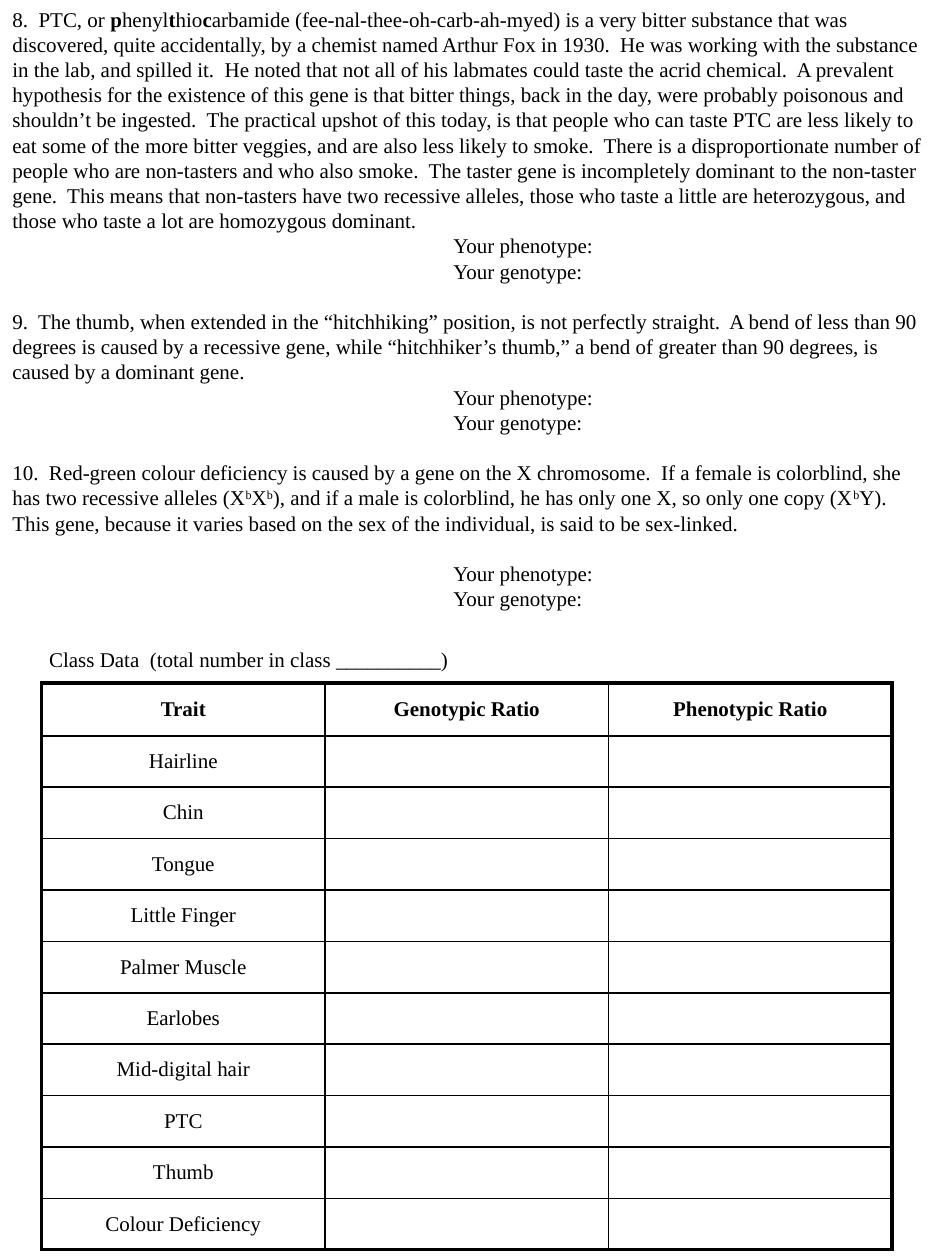
import pptx
import pptx.dml.color
import pptx.enum.text
import pptx.util
from pptx.oxml.ns import qn
from lxml import etree

Pt, Inches = pptx.util.Pt, pptx.util.Inches
ALIGN, ANCHOR = pptx.enum.text.PP_ALIGN, pptx.enum.text.MSO_ANCHOR
WIDTH, HEIGHT = Inches(7.5), Inches(10)
FONT, INK = "Times New Roman", "000000"
LINE = Pt(14.4)
THIN, THICK = Pt(1), Pt(2.25)

ANSWERS = ["\tYour phenotype:", "\tYour genotype:"]
# Each question: its runs as (text, style), and whether a gap precedes the answers
QUESTIONS = [
    ([("8.  PTC, or ", ""), ("p", "bold"), ("henyl", ""), ("t", "bold"), ("hio", ""), ("c", "bold"),
      ("arbamide (fee-nal-thee-oh-carb-ah-myed) is a very bitter substance that was discovered, "
       "quite accidentally, by a chemist named Arthur Fox in 1930.  He was working with the "
       "substance in the lab, and spilled it.  He noted that not all of his labmates could taste "
       "the acrid chemical.  ", ""),
      ("A prevalent hypothesis for the existence of this gene is that bitter "
       "things, back in the day, were probably poisonous and shouldn’t be ingested.  The practical "
       "upshot of this today, is that people who can taste PTC are less likely to eat some of the "
       "more bitter veggies, and are also less likely to smoke.  ", ""),
      ("There is a disproportionate number "
       "of people who are non-tasters and who also smoke.  The taster gene is incompletely dominant "
       "to the non-taster gene.  This means that non-tasters have two recessive alleles, those who "
       "taste a little are heterozygous, and those who taste a lot are homozygous dominant.", "")],
     False),
    ([("9.  The thumb, when extended in the “hitchhiking” position, is not perfectly straight.  "
       "A bend of less than 90 degrees is caused by a recessive gene, while “hitchhiker’s thumb,” "
       "a bend of greater than 90 degrees, is caused by a dominant gene.", "")],
     False),
    ([("10.  Red-green colour deficiency is caused by a gene on the X chromosome.  If a female is "
       "colorblind, she has two recessive alleles (X", ""), ("b", "super"), ("X", ""), ("b", "super"),
      ("), and if a male is colorblind, he has only one X, so only one copy (X", ""), ("b", "super"),
      ("Y).  This gene, because it varies based on the sex of the individual, is said to be "
       "sex-linked.", "")],
     True),
]
HEADERS = ["Trait", "Genotypic Ratio", "Phenotypic Ratio"]
TRAITS = ["Hairline", "Chin", "Tongue", "Little Finger", "Palmer Muscle", "Earlobes",
          "Mid-digital hair", "PTC", "Thumb", "Colour Deficiency"]


def color(value):
    return pptx.dml.color.RGBColor.from_string(value)


def set_font(p, bold=False):
    p.font.name, p.font.size, p.font.bold = FONT, Pt(12), bold
    p.font.color.rgb = color(INK)


def add_paragraph(tf, runs, gap):
    """Add a worksheet paragraph with the answer tab stop, one line lower if gap."""
    p = tf.paragraphs[0] if not tf.paragraphs[0].runs else tf.add_paragraph()
    tabs = etree.SubElement(p._p.get_or_add_pPr(), qn("a:tabLst"))
    etree.SubElement(tabs, qn("a:tab"), pos=str(Inches(3.5)), algn="l")
    p.line_spacing = LINE
    if gap:
        p.space_before = LINE
    set_font(p)
    for text, style in runs:
        r = p.add_run()
        r.text = text
        if style == "bold":
            r.font.bold = True
        elif style == "super":
            r._r.get_or_add_rPr().set("baseline", "30000")


def add_questions(s, left, top, width, height):
    tf = s.shapes.add_textbox(left, top, width, height).text_frame
    tf.word_wrap = True
    for i, (runs, gap_before_answers) in enumerate(QUESTIONS):
        add_paragraph(tf, runs, i > 0)
        for j, answer in enumerate(ANSWERS):
            add_paragraph(tf, [(answer, "")], gap_before_answers and j == 0)


def add_title(s, left, top, width, height):
    sp = s.shapes.title
    sp.left, sp.top, sp.width, sp.height = left, top, width, height
    tf = sp.text_frame
    tf.text = "Class Data  (total number in class __________)"
    tf.word_wrap = False
    tf.auto_size = pptx.enum.text.MSO_AUTO_SIZE.NONE
    tf.vertical_anchor = ANCHOR.TOP
    p = tf.paragraphs[0]
    p.alignment = ALIGN.LEFT
    p.line_spacing = LINE
    set_font(p)


def set_borders(cell, widths):
    """Draw the left, right, top and bottom borders, in that order."""
    tcPr = cell._tc.get_or_add_tcPr()
    for i, (side, width) in enumerate(zip("LRTB", widths)):
        ln = etree.Element(qn(f"a:ln{side}"), w=str(width))
        fill = etree.SubElement(ln, qn("a:solidFill"))
        etree.SubElement(fill, qn("a:srgbClr"), val=INK)
        tcPr.insert(i, ln)


def add_class_table(s, left, top, width, height):
    rows = [HEADERS] + [[trait, "", ""] for trait in TRAITS]
    n_rows, n_cols = len(rows), len(HEADERS)
    table = s.shapes.add_table(n_rows, n_cols, left, top, width, height).table
    table.first_row = table.horz_banding = False
    header_height = Inches(0.42)
    for i, row in enumerate(table.rows):
        row.height = header_height if i == 0 else (height - header_height) // (n_rows - 1)
        for j, cell in enumerate(row.cells):
            cell.text = rows[i][j]
            cell.vertical_anchor = ANCHOR.MIDDLE
            cell.fill.background()
            p = cell.text_frame.paragraphs[0]
            p.alignment = ALIGN.CENTER
            set_font(p, bold=i == 0)
            outer = (j == 0, j == n_cols - 1, i == 0, i == n_rows - 1)
            set_borders(cell, [THICK if edge else THIN for edge in outer])


def main():
    prs = pptx.Presentation()
    prs.slide_width, prs.slide_height = WIDTH, HEIGHT
    s = prs.slides.add_slide(prs.slide_layouts[5])
    add_questions(s, 0, 0, WIDTH, int(HEIGHT * 0.49))
    add_class_table(s, Inches(0.33), Inches(5.42), int(WIDTH * 0.9), int(HEIGHT * 0.45))
    add_title(s, Inches(0.29), Inches(5.08), int(WIDTH * 0.45), int(HEIGHT * 0.03))
    prs.save("out.pptx")


if __name__ == "__main__":
    main()
